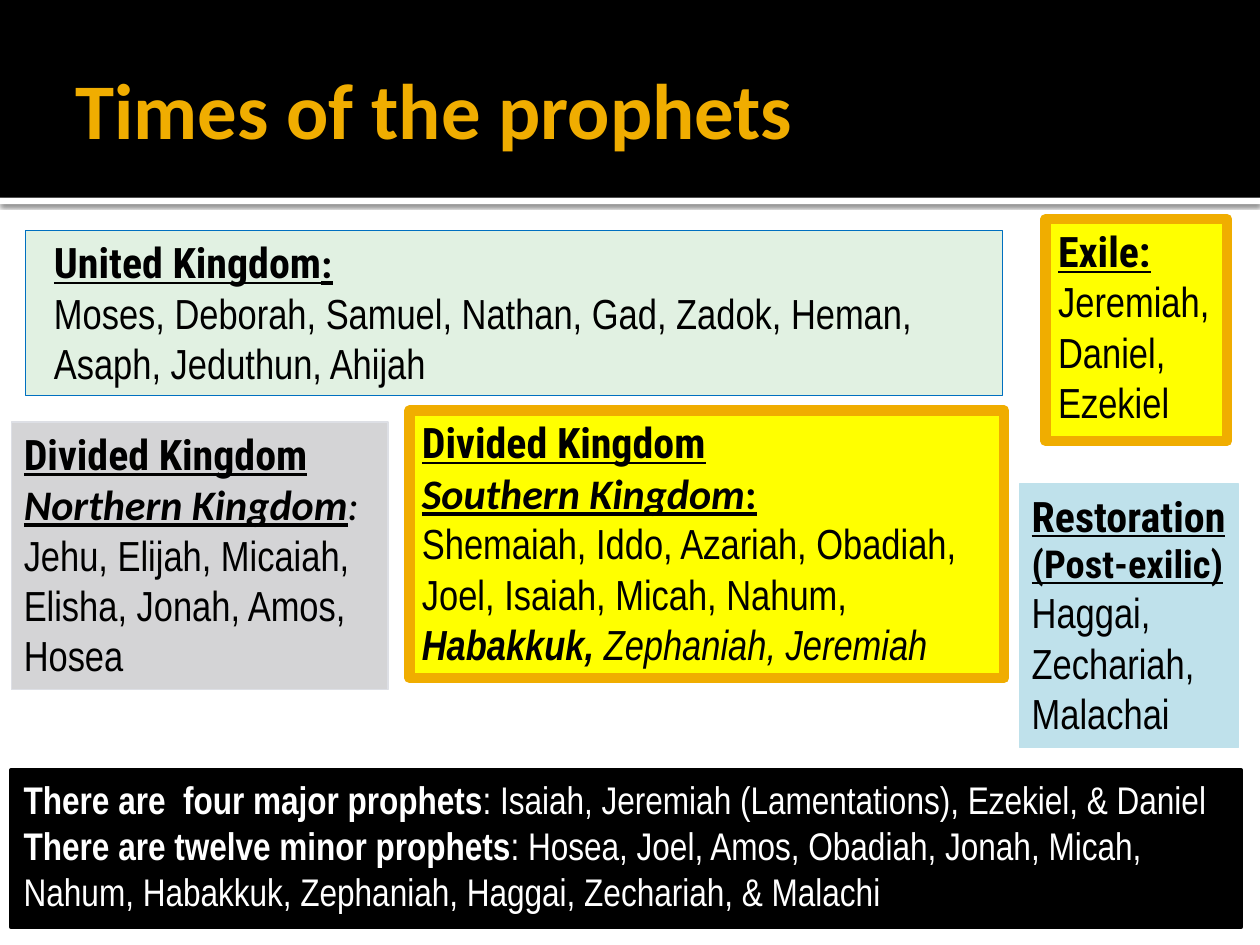
from dataclasses import dataclass
from lxml.etree import SubElement
from pptx import Presentation
from pptx.dml.color import RGBColor
from pptx.enum.shapes import MSO_SHAPE
from pptx.enum.text import MSO_ANCHOR, MSO_AUTO_SIZE, PP_ALIGN
from pptx.oxml.ns import qn
from pptx.util import Inches, Pt


@dataclass(frozen=True)
class Theme:
    black: str = "000000"
    white: str = "FFFFFF"
    gold: str = "F0AD00"
    yellow: str = "FFFF00"
    gray: str = "D4D4D6"
    edge: str = "DDDFE5"
    sky: str = "BFE1EB"
    mint: str = "E1F1E2"
    blue: str = "0070C0"
    title: int = 45
    large: int = 24
    small: int = 22
    sans: str = "Calibri"
    head: str = "Roboto Condensed"
    slim: str = "Arial Narrow"


T = Theme()
BREAK = None

# Run formats
HEAD = dict(name=T.head, size=T.large, bold=True, underline=True)
SUB = {**HEAD, "name": T.sans}
REALM = {**SUB, "italic": True}
NOTE = {**HEAD, "size": T.small}
BODY = dict(name=T.slim, size=T.large)
SLANT = {**BODY, "italic": True}
STRONG = {**SLANT, "bold": True}
FACT = dict(name=T.slim, size=T.small, color=T.white)
LEAD = {**FACT, "bold": True}

# Each era: box, fill, line, line width, indent, paragraphs of (text, format)
ERAS = [
    ((0.09, 3.35, 2.99, 2.12), T.gray, T.edge, 0.75, 0, [
        [("Divided Kingdom", HEAD)],
        [("Northern Kingdom", REALM), (":", {**REALM, "bold": False, "underline": False})],
        [("Jehu, Elijah, Micaiah,", BODY)],
        [("Elisha, Jonah, Amos,", BODY)],
        [("Hosea", BODY)]]),
    ((3.25, 3.26, 4.72, 2.12), T.yellow, T.gold, 6, 0, [
        [("Divided Kingdom", HEAD)],
        [("Southern Kingdom", REALM), (":", SUB)],
        [("Shemaiah, Iddo, Azariah, Obadiah, Joel, Isaiah, Micah, Nahum, ", BODY),
         ("Habakkuk,", STRONG), (" Zephaniah, Jeremiah", SLANT)]]),
    ((8.09, 3.84, 1.74, 2.09), T.sky, T.sky, 0.75, 0, [
        [("Restoration", HEAD), BREAK, ("(Post-exilic)", NOTE)],
        [("Haggai, Zechariah, Malachai", BODY)]]),
    ((8.3, 1.74, 1.44, 1.76), T.yellow, T.gold, 6, 0, [
        [("Exile:", HEAD)],
        [("Jeremiah, Daniel, Ezekiel", BODY)]]),
    ((0.2, 1.83, 7.76, 1.31), T.mint, T.blue, 0.75, 0.13, [
        [("United Kingdom", HEAD), (":", SUB)],
        [("Moses, Deborah, Samuel, Nathan, Gad, Zadok, Heman, "
          "Asaph, Jeduthun, Ahijah", BODY)]]),
]

FACTS = [
    [("There are  four major prophets", LEAD),
     (": Isaiah, Jeremiah (Lamentations), Ezekiel, & Daniel", FACT)],
    [("There are twelve minor prophets", LEAD),
     (": Hosea, Joel, Amos, Obadiah, Jonah, Micah, Nahum, Habakkuk, "
      "Zephaniah, Haggai, Zechariah, & Malachi", FACT)],
]


def style(font, form):
    for key, value in {"color": T.black, **form}.items():
        if key == "color":
            font.color.rgb = RGBColor.from_string(value)
        else:
            setattr(font, key, Pt(value) if key == "size" else value)


def block(slide, box, fill, line=None, width=0):
    shape = slide.shapes.add_shape(MSO_SHAPE.RECTANGLE, *map(Inches, box))
    shape.shadow.inherit = False
    shape.fill.solid()
    shape.fill.fore_color.rgb = RGBColor.from_string(fill)
    if line:
        shape.line.color.rgb = RGBColor.from_string(line)
        shape.line.width = Pt(width)
    else:
        shape.line.fill.background()
    return shape


def write(frame, paras, indent=0):
    form = dict(word_wrap=True, vertical_anchor=MSO_ANCHOR.TOP,
                auto_size=MSO_AUTO_SIZE.SHAPE_TO_FIT_TEXT)
    for key, value in form.items():
        setattr(frame, key, value)
    for n, parts in enumerate(paras):
        para = frame.add_paragraph() if n else frame.paragraphs[0]
        para.alignment = PP_ALIGN.LEFT
        if indent:
            para._p.get_or_add_pPr().set("marL", str(Inches(indent)))
        for part in parts:
            if part is BREAK:
                para.add_line_break()
                continue
            run = para.add_run()
            run.text, form = part
            style(run.font, form)


def header(slide, box):
    left, top, width, height = box
    # White rule with a soft shadow under the black band
    rule = block(slide, (left, top + height, width, 0.05), T.white)
    glow = SubElement(rule._element.spPr.find(qn("a:effectLst")), qn("a:outerShdw"),
                      blurRad=str(Pt(2.5)), dist=str(Pt(0.8)), dir="5400000",
                      algn="t", rotWithShape="0")
    tint = SubElement(glow, qn("a:srgbClr"), val=T.black)
    SubElement(tint, qn("a:alpha"), val="60000")
    block(slide, box, T.black)

    # Title, brought in front of the band
    title = slide.shapes.title
    slide.shapes._spTree.append(title._element)
    place = dict(left=left + 0.5, top=top + 0.17, width=width - 1, height=height - 0.2)
    for key, value in place.items():
        setattr(title, key, Inches(value))
    frame = title.text_frame
    write(frame, [[("Times of the prophets",
                    dict(name=T.sans, size=T.title, bold=True, color=T.gold))]])
    frame.vertical_anchor = MSO_ANCHOR.MIDDLE
    frame.auto_size = MSO_AUTO_SIZE.NONE


def era(slide, box, fill, line, width, indent, paras):
    write(block(slide, box, fill, line, width).text_frame, paras, indent)


def facts(slide, box):
    write(block(slide, box, T.black, T.black, 2.25).text_frame, FACTS)


def main():
    deck = Presentation()
    deck.slide_width, deck.slide_height = Inches(10), Inches(7.5)
    slide = deck.slides.add_slide(deck.slide_layouts[5])
    header(slide, (0, 0, 10, 1.57))
    for item in ERAS:
        era(slide, *item)
    facts(slide, (0.09, 6.11, 9.76, 1.25))
    deck.save("out.pptx")


if __name__ == "__main__":
    main()
